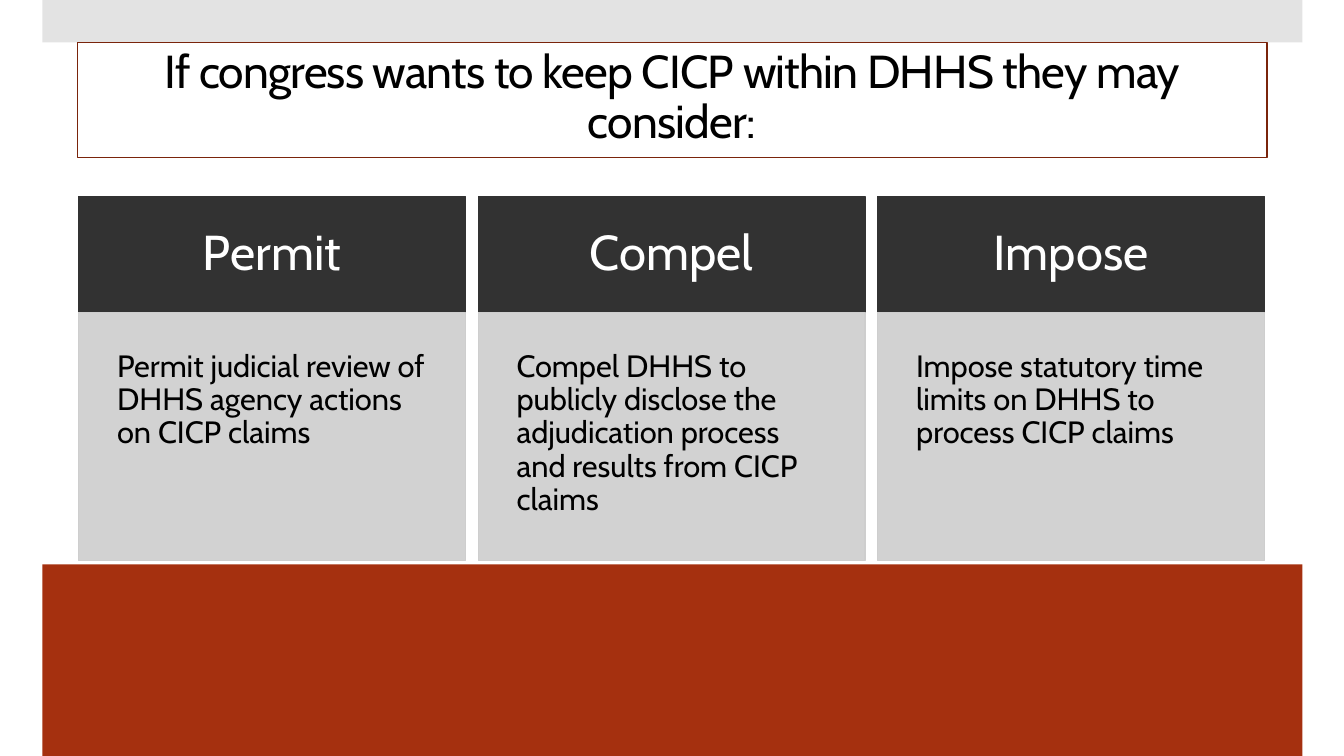
from lxml import etree
from pptx import Presentation
from pptx.dml.color import RGBColor
from pptx.enum.shapes import MSO_SHAPE
from pptx.enum.text import MSO_ANCHOR, PP_ALIGN
from pptx.oxml.ns import qn
from pptx.util import Cm, Pt

TITLE = "If congress wants to keep CICP within DHHS they may consider:"
CARDS = [
    ("Permit", "Permit judicial review of DHHS agency actions on CICP claims"),
    ("Compel", "Compel DHHS to publicly disclose the adjudication process "
               "and results from CICP claims"),
    ("Impose", "Impose statutory time limits on DHHS to process CICP claims"),
]

FONT = "Cabin"
BLACK = RGBColor(0x00, 0x00, 0x00)
WHITE = RGBColor(0xFF, 0xFF, 0xFF)
RUST = RGBColor(0xA5, 0x30, 0x0F)
DARK_RUST = RGBColor(0x7A, 0x24, 0x0B)
CHARCOAL = RGBColor(0x32, 0x32, 0x32)
SILVER = RGBColor(0xC8, 0xC8, 0xC8)
LIGHT_GREY = RGBColor(0xCE, 0xCE, 0xCE)
RECTANGLE = MSO_SHAPE.RECTANGLE
TOP, MIDDLE = MSO_ANCHOR.TOP, MSO_ANCHOR.MIDDLE
LEFT, CENTER = PP_ALIGN.LEFT, PP_ALIGN.CENTER

# Lengths in centimetres
BAND_LEFT, BAND_WIDTH = 1.07, 31.75
CARD_LEFT, CARD_WIDTH, CARD_PITCH = 1.98, 9.75, 10.07
HEAD_TOP, HEAD_HEIGHT, BODY_HEIGHT = 4.95, 2.92, 6.25


def set_alpha(color_format, percent):
    """Make a solid fill or line partly transparent."""
    color = color_format._xFill.find(qn("a:srgbClr"))
    etree.SubElement(color, qn("a:alpha")).set("val", str(percent * 1000))


def add_rect(slide, box, fill=None, line=None, alpha=100):
    sp = slide.shapes.add_shape(RECTANGLE, *map(Cm, box))
    sp.shadow.inherit = False
    if fill is None:
        sp.fill.background()
    else:
        sp.fill.solid()
        sp.fill.fore_color.rgb = fill
    if line is None:
        sp.line.fill.background()
    else:
        sp.line.color.rgb = line
        sp.line.width = Pt(0.85)
    if alpha < 100:
        color = sp._element.spPr.find(qn("a:solidFill")).find(qn("a:srgbClr"))
        etree.SubElement(color, qn("a:alpha")).set("val", str(alpha * 1000))
    return sp


def write(sp, text, size, color, align, anchor, inset_x, inset_y):
    tf = sp.text_frame
    tf.word_wrap = True
    tf.vertical_anchor = anchor
    tf.margin_left = tf.margin_right = Cm(inset_x)
    tf.margin_top = tf.margin_bottom = Cm(inset_y)
    p = tf.paragraphs[0]
    p.text = text
    p.alignment = align
    p.line_spacing = 0.9
    p.font.name = FONT
    p.font.size = Pt(size)
    p.font.color.rgb = color
    return p


def main():
    prs = Presentation()
    prs.slide_width, prs.slide_height = Cm(33.87), Cm(19.05)
    slide = prs.slides.add_slide(prs.slide_layouts[6])

    add_rect(slide, (BAND_LEFT, 14.22, BAND_WIDTH, 4.83), RUST)
    add_rect(slide, (BAND_LEFT, 0, BAND_WIDTH, 1.07), SILVER, alpha=50)

    title = slide.shapes.add_textbox(Cm(1.78), Cm(1.07), Cm(30.3), Cm(2.84))
    p = write(title, TITLE, 33, BLACK, CENTER, MIDDLE, 0.25, 0.13)
    p.runs[0].font._element.set("spc", "-60")

    for i, (heading, body) in enumerate(CARDS):
        x = CARD_LEFT + i * CARD_PITCH
        sp = add_rect(slide, (x, HEAD_TOP, CARD_WIDTH, HEAD_HEIGHT),
                      CHARCOAL, CHARCOAL)
        write(sp, heading, 35, WHITE, CENTER, MIDDLE, 0.76, 0.76)
        sp = add_rect(slide, (x, HEAD_TOP + HEAD_HEIGHT, CARD_WIDTH, BODY_HEIGHT),
                      LIGHT_GREY, LIGHT_GREY, alpha=90)
        write(sp, body, 22, BLACK, LEFT, TOP, 0.97, 0.97)

    add_rect(slide, (1.96, 1.07, 29.97, 2.9), line=DARK_RUST)
    prs.save("out.pptx")


if __name__ == "__main__":
    main()
